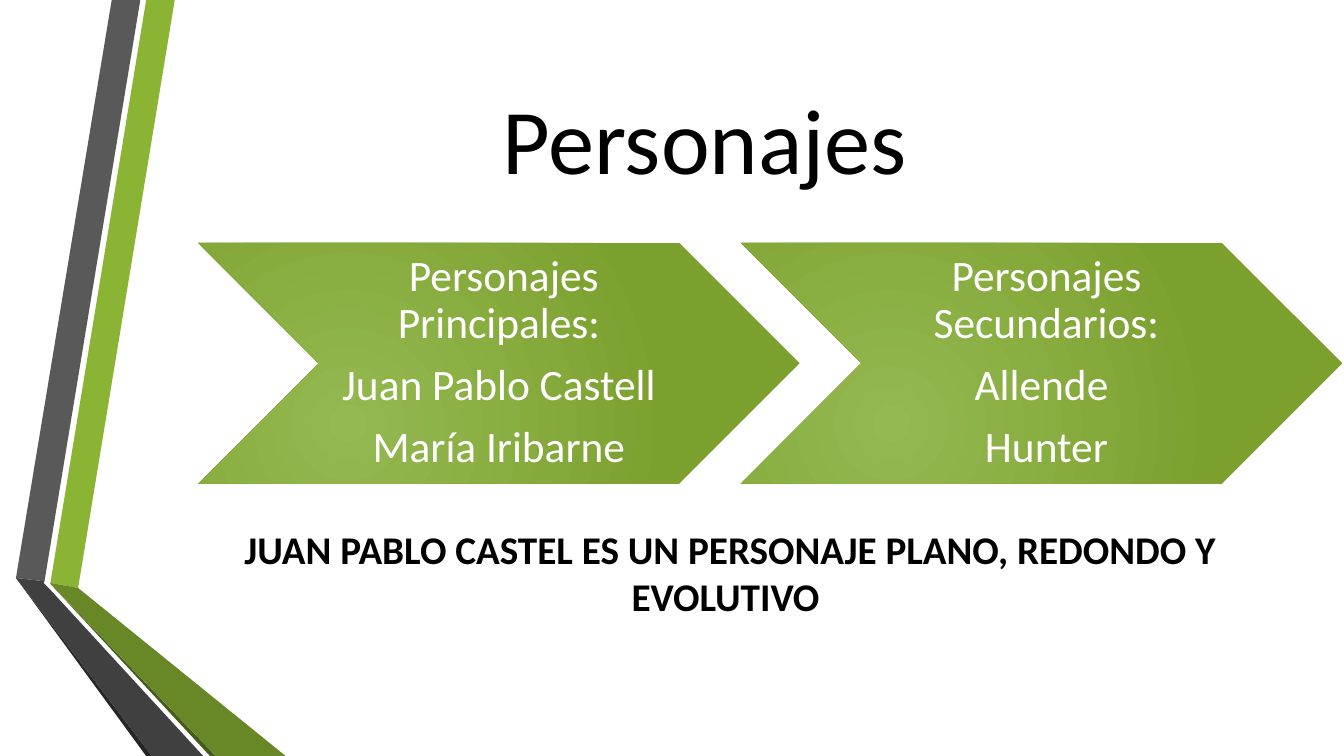
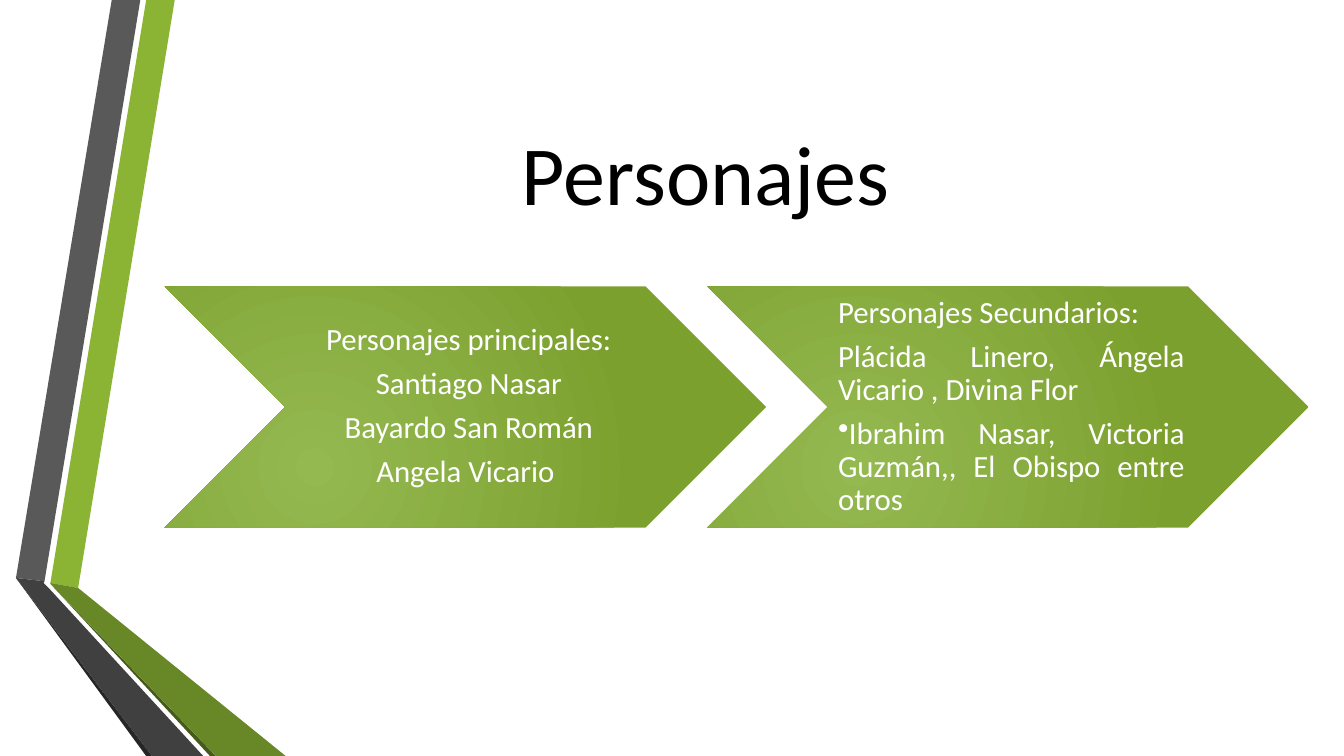
from dataclasses import dataclass

from lxml.etree import SubElement
from pptx import Presentation
from pptx.dml.color import RGBColor
from pptx.enum.shapes import MSO_SHAPE
from pptx.enum.text import MSO_ANCHOR, PP_ALIGN
from pptx.oxml.ns import qn
from pptx.slide import Slide
from pptx.text.text import TextFrame
from pptx.util import Emu, Pt

COLS, ROWS = 16, 9
CELL = 762000


@dataclass(frozen=True)
class Theme:
    font: str = "Calibri"
    ink: str = "000000"
    paper: str = "FFFFFF"
    glow: str = "94B951"
    leaf: str = "7CA02E"
    note: int = 28


@dataclass(frozen=True)
class Band:
    fill: str
    points: tuple[tuple[float, float], ...]


@dataclass(frozen=True)
class Box:
    left: float
    top: float
    width: float
    height: float

    def emu(self) -> tuple[Emu, ...]:
        return tuple(map(grid, (self.left, self.top, self.width, self.height)))


@dataclass(frozen=True)
class Style:
    size: float
    color: str
    align: PP_ALIGN = PP_ALIGN.CENTER
    bold: bool = False
    line: float = 1.0
    after: float = 0


@dataclass(frozen=True)
class Arrow:
    lines: tuple[str, ...]
    align: PP_ALIGN = PP_ALIGN.CENTER
    bullets: tuple[int, ...] = ()


@dataclass(frozen=True)
class Page:
    top: float
    title: int
    left: float
    row: float
    size: int
    arrows: tuple[Arrow, ...]
    note: str = ""


THEME = Theme()
WIDE, HIGH, STEP = 7.16, 2.87, 6.46

BANDS = (
    Band("8BB434", ((0.6, 6.94), (0.93, 7), (2.08, 0), (1.74, 0))),
    Band("595959", ((1.67, 0), (1.33, 0), (0.19, 6.88), (0.53, 6.92))),
    Band("262626", ((0.19, 6.88), (1.74, 9), (1.81, 9))),
    Band("465A1A", ((0.6, 6.95), (2.5, 9), (2.57, 9))),
    Band("688727", ((0.6, 6.95), (2.57, 9), (3.4, 9), (0.93, 7), (0.6, 6.94))),
    Band("404040", ((2.42, 9), (0.58, 7), (0.52, 6.94), (0.53, 6.92),
                    (0.19, 6.88), (1.81, 9))),
)

PAGES = (
    Page(0.49, 66, 2.36, 2.89, 31, (
        Arrow(("Personajes Principales: ", "Juan Pablo Castell ",
               "María Iribarne ")),
        Arrow(("Personajes Secundarios:", "Allende ", "Hunter")),
    ), "JUAN PABLO CASTEL ES UN PERSONAJE PLANO, REDONDO Y EVOLUTIVO "),
    Page(0.9, 60, 1.96, 3.41, 22, (
        Arrow(("Personajes principales:", "Santiago Nasar",
               "Bayardo San Román", "Angela Vicario ")),
        Arrow(("Personajes Secundarios:",
               "Plácida Linero, Ángela Vicario , Divina Flor ",
               "Ibrahim Nasar, Victoria Guzmán,, El Obispo entre otros "),
              PP_ALIGN.JUSTIFY, (2,)),
    )),
)


def grid(cells: float) -> Emu:
    return Emu(round(cells * CELL))


def rgb(code: str) -> RGBColor:
    return RGBColor.from_string(code)


def write(frame: TextFrame, lines: tuple[str, ...], style: Style) -> None:
    frame.word_wrap = True
    for i, text in enumerate(lines):
        par = frame.paragraphs[0] if i == 0 else frame.add_paragraph()
        par.text = text
        par.alignment = style.align
        par.line_spacing = style.line
        par.space_after = Pt(style.after)
        font = par.font
        font.name, font.size, font.bold = THEME.font, Pt(style.size), style.bold
        font.color.rgb = rgb(style.color)


def add_text(slide: Slide, box: Box, text: str, style: Style,
             anchor: MSO_ANCHOR) -> None:
    frame = slide.shapes.add_textbox(*box.emu()).text_frame
    frame.vertical_anchor = anchor
    write(frame, (text,), style)


def add_band(slide: Slide, band: Band) -> None:
    first, *rest = [(grid(x), grid(y)) for x, y in band.points]
    pen = slide.shapes.build_freeform(*first)
    pen.add_line_segments(rest, close=True)
    shape = pen.convert_to_shape()
    shape.shadow.inherit = False
    shape.fill.solid()
    shape.fill.fore_color.rgb = rgb(band.fill)
    shape.line.fill.background()


def add_arrow(slide: Slide, box: Box, arrow: Arrow, size: int) -> None:
    shape = slide.shapes.add_shape(MSO_SHAPE.CHEVRON, *box.emu())
    shape.shadow.inherit = False
    shape.line.fill.background()
    shape.fill.gradient()
    for stop, code in zip(shape.fill.gradient_stops, (THEME.glow, THEME.leaf)):
        stop.color.rgb = rgb(code)
    grad = shape.element.spPr.find(qn("a:gradFill"))
    grad.remove(grad.find(qn("a:lin")))
    ring = SubElement(grad, qn("a:path"), {"path": "circle"})
    SubElement(ring, qn("a:fillToRect"),
               {"l": "50000", "t": "100000", "r": "100000", "b": "50000"})

    frame = shape.text_frame
    frame.vertical_anchor = MSO_ANCHOR.MIDDLE
    frame.margin_left = Pt(size / 3)
    frame.margin_top = frame.margin_right = frame.margin_bottom = Pt(size / 9)
    write(frame, arrow.lines, Style(size, THEME.paper, arrow.align,
                                    line=0.9, after=size * 0.35))
    for i in arrow.bullets:
        props = frame.paragraphs[i]._p.get_or_add_pPr()
        props.set("marL", "0")
        props.set("indent", "0")
        mark = props.makeelement(qn("a:buChar"), {"char": "•"})
        props.find(qn("a:defRPr")).addprevious(mark)


def add_page(slide: Slide, page: Page) -> None:
    for band in BANDS:
        add_band(slide, band)
    add_text(slide, Box(1.94, page.top, 13.15, 2.3), "Personajes ",
             Style(page.title, THEME.ink), MSO_ANCHOR.MIDDLE)
    for i, arrow in enumerate(page.arrows):
        box = Box(page.left + i * STEP, page.row, WIDE, HIGH)
        add_arrow(slide, box, arrow, page.size)
    if page.note:
        add_text(slide, Box(2.28, 6.2, 12.82, 1.25), page.note,
                 Style(THEME.note, THEME.ink, bold=True), MSO_ANCHOR.TOP)


def main() -> None:
    deck = Presentation()
    deck.slide_width, deck.slide_height = grid(COLS), grid(ROWS)
    for page in PAGES:
        add_page(deck.slides.add_slide(deck.slide_layouts[6]), page)
    deck.save("out.pptx")


if __name__ == "__main__":
    main()
